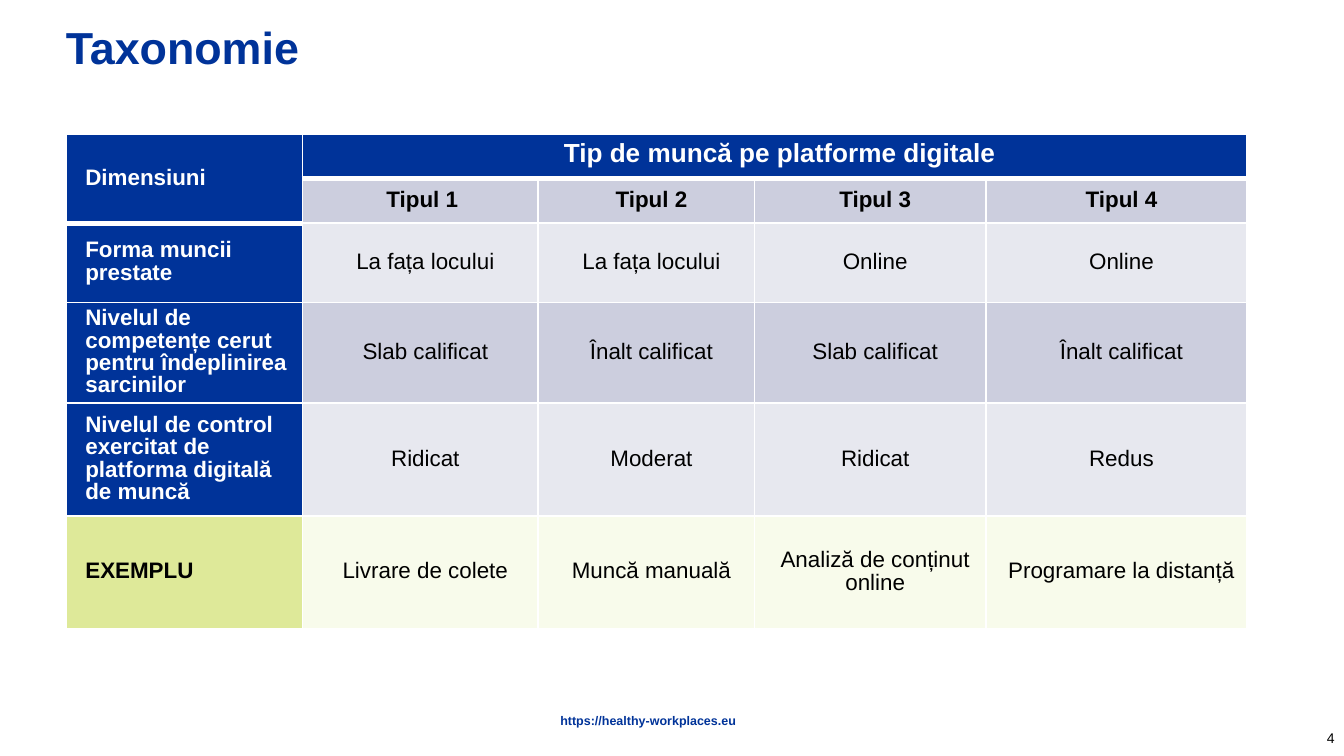
from lxml import etree
from pptx import Presentation
from pptx import util as u
from pptx.dml.color import RGBColor
from pptx.enum import text
from pptx.oxml.ns import qn

PX = 4572  # EMU per px, 200 px to the inch
FONT = "Arial"
WHITE = RGBColor(0xFF, 0xFF, 0xFF)
BLACK = RGBColor(0, 0, 0)
BLUE = RGBColor(0x00, 0x33, 0x99)
GREY = RGBColor(0xCC, 0xCE, 0xDE)
LIGHT_GREY = RGBColor(0xE7, 0xE8, 0xEF)
GREEN = RGBColor(0xDE, 0xE9, 0x99)
LIGHT_GREEN = RGBColor(0xF8, 0xFB, 0xEB)

LEFT, CENTER, RIGHT = text.PP_ALIGN.LEFT, text.PP_ALIGN.CENTER, text.PP_ALIGN.RIGHT
JUSTIFY = text.PP_ALIGN.JUSTIFY
MIDDLE = text.MSO_ANCHOR.MIDDLE

COLS = [352, 351, 322, 344, 389]
ROWS = [66, 66, 118, 150, 168, 168]
DATA = [
    ["Dimensiuni", "Tip de muncă pe platforme digitale", "", "", ""],
    ["", "Tipul 1 ", "Tipul 2", "Tipul 3", "Tipul 4"],
    ["Forma muncii prestate", "La fața locului", "La fața locului", "Online", "Online"],
    ["Nivelul de competențe cerut pentru îndeplinirea sarcinilor",
     "Slab calificat", "Înalt calificat", "Slab calificat", "Înalt calificat"],
    ["Nivelul de control exercitat de platforma digitală de muncă",
     "Ridicat", "Moderat", "Ridicat", "Redus"],
    ["EXEMPLU", "Livrare de colete", "Muncă manuală",
     "Analiză de conținut online", "Programare la distanță"],
]
# Fill of the first column and of the other columns, row by row
FILLS = [(BLUE, BLUE), (BLUE, GREY), (BLUE, LIGHT_GREY),
         (BLUE, GREY), (BLUE, LIGHT_GREY), (GREEN, LIGHT_GREEN)]


def set_margins(obj, left, top, right, bottom):
    obj.margin_left, obj.margin_top = left * PX, top * PX
    obj.margin_right, obj.margin_bottom = right * PX, bottom * PX


def write(tf, content, size, color, bold, align):
    tf.word_wrap = True
    p = tf.paragraphs[0]
    p.text = content
    p.alignment = align
    for r in p.runs:
        r.font.name, r.font.size = FONT, u.Pt(size)
        r.font.bold, r.font.color.rgb = bold, color
    return p


def add_title(s, x, y, w, h):
    sp = s.shapes.title
    sp.left, sp.top, sp.width, sp.height = (v * PX for v in (x, y, w, h))
    tf = sp.text_frame
    write(tf, "Taxonomie", 24, BLUE, True, LEFT)
    tf.auto_size = text.MSO_AUTO_SIZE.NONE
    tf.vertical_anchor = MIDDLE
    set_margins(tf, 0, 10, 20, 10)


def add_borders(cell, top, bottom):
    tc_pr = cell._tc.get_or_add_tcPr()
    for side, width in (("L", 1), ("R", 1), ("T", top), ("B", bottom)):
        ln = etree.SubElement(tc_pr, qn(f"a:ln{side}"), w=str(u.Pt(width)))
        fill = etree.SubElement(ln, qn("a:solidFill"))
        etree.SubElement(fill, qn("a:srgbClr"), val=str(WHITE))


def format_cell(cell, row, col):
    # A thick rule closes the header, which is two rows deep in the first column
    header_end = 1 if col == 0 else 0
    add_borders(cell, 3 if row == header_end + 1 else 1,
                3 if row <= header_end else 1)
    fill = FILLS[row][min(col, 1)]
    cell.fill.solid()
    cell.fill.fore_color.rgb = fill
    cell.vertical_anchor = MIDDLE
    set_margins(cell, 14, 0, 14, 0)
    if not DATA[row][col]:
        return
    align = CENTER if col else JUSTIFY if row == 0 else LEFT
    p = write(cell.text_frame, DATA[row][col],
              14 if (row, col) == (0, 1) else 12,
              WHITE if fill == BLUE else BLACK,
              row < 2 or col == 0, align)
    p.line_spacing = u.Pt(12)
    p.space_after = u.Pt(6)
    p._p.get_or_add_pPr().set("marL", str(15 * PX))


def add_taxonomy(s, x, y):
    frame = s.shapes.add_table(len(ROWS), len(COLS), x * PX, y * PX,
                               sum(COLS) * PX, sum(ROWS) * PX)
    table = frame.table
    table.first_row = table.horz_banding = False
    for column, w in zip(table.columns, COLS):
        column.width = w * PX
    for row, h in zip(table.rows, ROWS):
        row.height = h * PX
    for i in range(len(ROWS)):
        for j in range(len(COLS)):
            format_cell(table.cell(i, j), i, j)
    table.cell(0, 0).merge(table.cell(1, 0))
    table.cell(0, 1).merge(table.cell(0, 4))


def add_label(s, x, y, w, h, content, size, color, bold, align, margins):
    tf = s.shapes.add_textbox(x * PX, y * PX, w * PX, h * PX).text_frame
    set_margins(tf, *margins)
    p = write(tf, content, size, color, bold, align)
    return tf, p


def add_footer(s, x, y, w, h):
    # Web address, centred
    _, p = add_label(s, x, y, 1322, 18, "https://healthy-workplaces.eu",
                     6.7, BLUE, True, CENTER, (0, 1, 0, 0))
    p.line_spacing = 0.9
    # Page number, in the lower right corner of the box
    tf, _ = add_label(s, x + w - 134, y + h - 60, 134, 60, "4",
                      7.5, BLACK, False, RIGHT, (14, 8, 14, 8))
    tf.vertical_anchor = MIDDLE


def main():
    prs = Presentation()
    prs.slide_width, prs.slide_height = 2000 * PX, 1125 * PX
    s = prs.slides.add_slide(prs.slide_layouts[5])
    add_title(s, 98, 30, 1654, 80)
    add_taxonomy(s, 98, 200)
    add_footer(s, 304, 1062, 1696, 66)
    prs.save("out.pptx")


if __name__ == "__main__":
    main()
